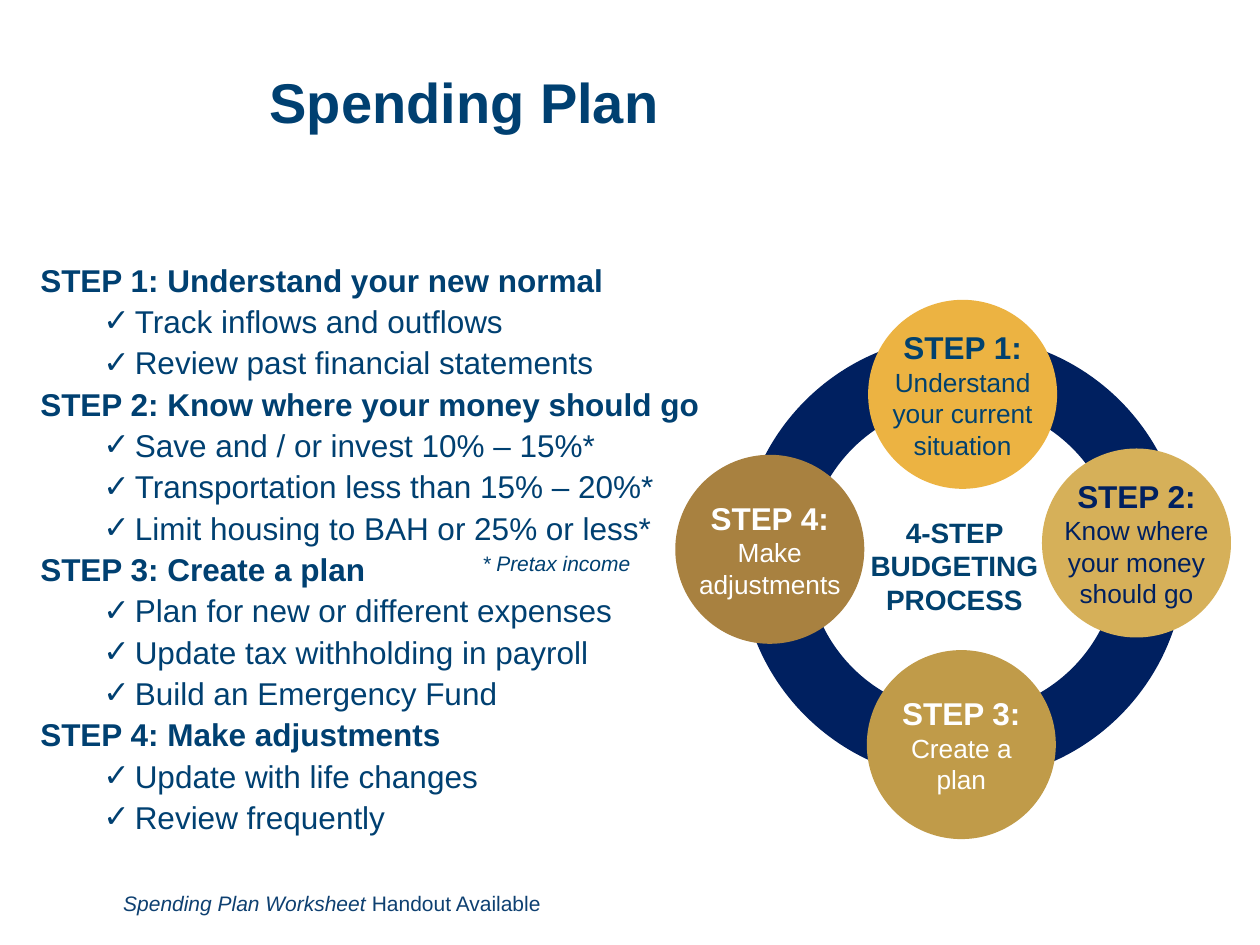
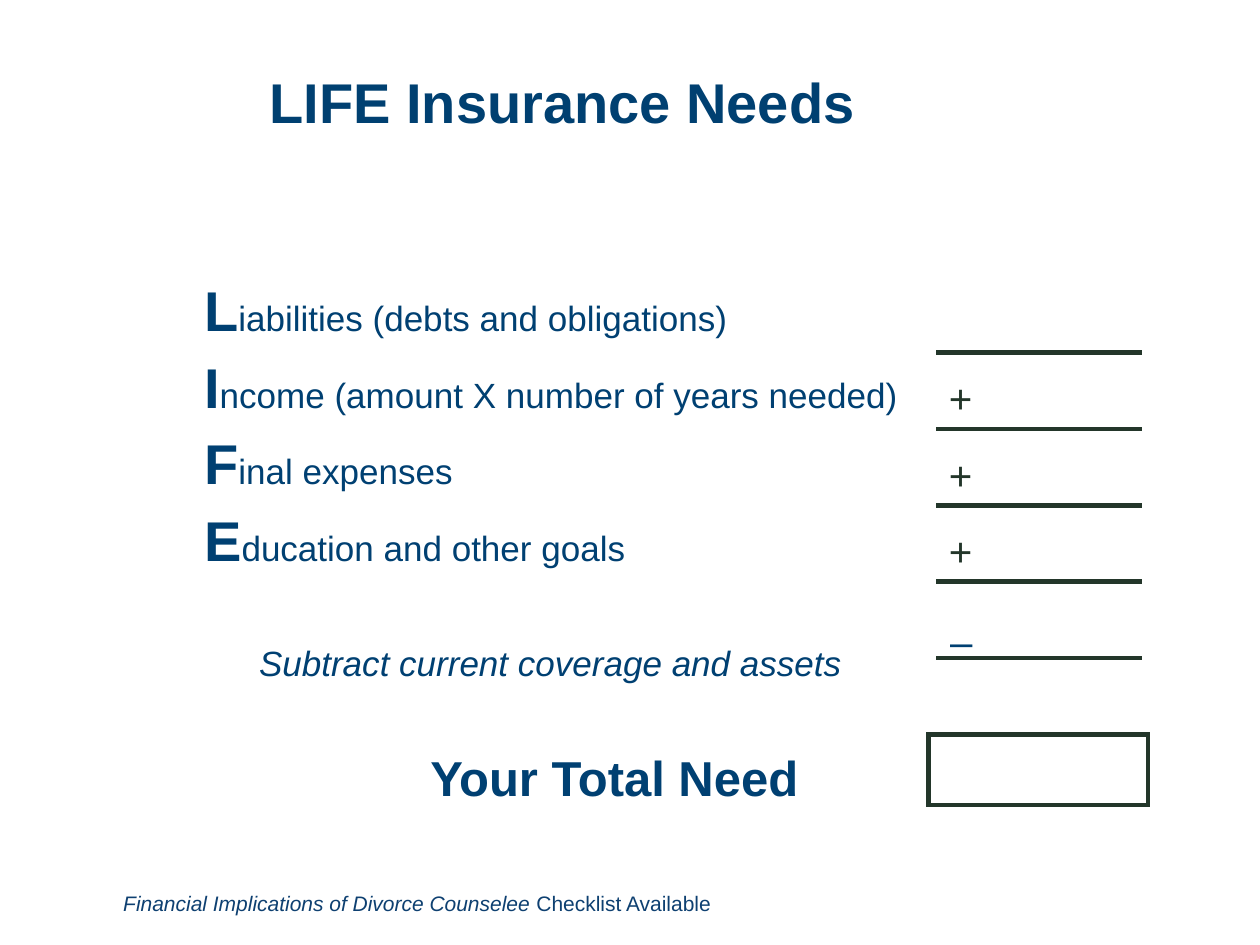
from dataclasses import dataclass
from typing import NamedTuple

from lxml.etree import SubElement
from pptx import Presentation
from pptx.dml.color import RGBColor
from pptx.enum.shapes import MSO_SHAPE
from pptx.enum.text import MSO_ANCHOR as Anchor, MSO_AUTO_SIZE as AutoSize, PP_ALIGN as Align
from pptx.oxml.ns import qn
from pptx.util import Emu, Inches, Pt

SLIDE_WIDTH, SLIDE_HEIGHT = Inches(10), Inches(7.5)
COLUMNS, ROWS = 100, 75
TITLE_AND_CONTENT, TITLE_ONLY = 1, 5
NO_TABLE_STYLE = "{2D5ABB26-0587-4C30-8999-92F81FD0307C}"


@dataclass(frozen=True)
class Theme:
    font: str = "Arial"
    heading: str = "004071"
    table_text: str = "004072"
    ring_text: str = "01416E"
    footer: str = "0E4071"
    navy: str = "002060"
    rule: str = "23362A"
    white: str = "FFFFFF"
    title_size: float = 32
    total_size: float = 28
    sign_size: float = 23
    item_size: float = 20
    step_size: float = 18
    center_size: float = 16
    label_size: float = 15
    note_size: float = 12
    rule_width: float = 3
    ring_width: float = 38.5


THEME = Theme()


class Area(NamedTuple):
    """A rectangle in grid columns and rows."""
    col: float
    row: float
    cols: float
    rows: float

    def emu(self) -> tuple[Emu, Emu, Emu, Emu]:
        return across(self.col), down(self.row), across(self.cols), down(self.rows)


class Span(NamedTuple):
    text: str
    size: float
    color: str
    bold: bool = False
    italic: bool = False


class Step(NamedTuple):
    """A circle on the ring, given by its centre, with its label."""
    heading: str
    lines: tuple[str, ...]
    col: float
    row: float
    fill: str
    ink: str


class PlanStep(NamedTuple):
    heading: str
    actions: tuple[str, ...]


class Need(NamedTuple):
    initial: str
    rest: str
    sign: str


PLAN = (
    PlanStep("STEP 1: Understand your new normal",
             ("Track inflows and outflows", "Review past financial statements")),
    PlanStep("STEP 2: Know where your money should go",
             ("Save and / or invest 10% – 15%*", "Transportation less than 15% – 20%*",
              "Limit housing to BAH or 25% or less*")),
    PlanStep("STEP 3: Create a plan",
             ("Plan for new or different expenses", "Update tax withholding in payroll",
              "Build an Emergency Fund")),
    PlanStep("STEP 4: Make adjustments",
             ("Update with life changes", "Review frequently")),
)
RING = (
    Step("STEP 1:", ("Understand your current", "situation"),
         76.4, 31.3, "ECB342", THEME.ring_text),
    Step("STEP 2:", ("Know where", "your money", "should go"),
         90.2, 43.1, "D6B059", THEME.navy),
    Step("STEP 3:", ("Create a plan",), 76.3, 59.1, "C09B49", THEME.white),
    Step("STEP 4:", ("Make", "adjustments"), 61.1, 43.6, "A88140", THEME.white),
)
NEEDS = (
    Need("L", "iabilities (debts and obligations)", ""),
    Need("I", "ncome (amount X number of years needed)", "+"),
    Need("F", "inal expenses", "+"),
    Need("E", "ducation and other goals", "+"),
)


def across(cols: float) -> Emu:
    return Emu(round(SLIDE_WIDTH * cols / COLUMNS))


def down(rows: float) -> Emu:
    return Emu(round(SLIDE_HEIGHT * rows / ROWS))


def place(shape, area: Area) -> None:
    shape.left, shape.top, shape.width, shape.height = area.emu()


def write(paragraph, *spans: Span, align=Align.LEFT) -> None:
    paragraph.alignment = align
    for span in spans:
        run = paragraph.add_run()
        run.text = span.text
        font = run.font
        font.name, font.size = THEME.font, Pt(span.size)
        font.bold, font.italic = span.bold, span.italic
        font.color.rgb = RGBColor.from_string(span.color)


def next_paragraph(frame, index: int):
    return frame.add_paragraph() if index else frame.paragraphs[0]


def add_text(slide, area: Area, *lines: tuple[Span, ...], align=Align.LEFT,
             anchor=Anchor.TOP) -> None:
    frame = slide.shapes.add_textbox(*area.emu()).text_frame
    frame.word_wrap = True
    frame.vertical_anchor = anchor
    for index, spans in enumerate(lines):
        write(next_paragraph(frame, index), *spans, align=align)


def start_slide(deck, layout: int, title: str, handout: str, availability: str):
    """Add a slide with its title and its handout footer."""
    slide = deck.slides.add_slide(deck.slide_layouts[layout])
    heading = slide.shapes.title
    place(heading, Area(20.4, 1.1, 72.6, 14.5))
    frame = heading.text_frame
    frame.auto_size, frame.vertical_anchor = AutoSize.NONE, Anchor.MIDDLE
    frame.paragraphs[0].line_spacing = 0.9
    write(frame.paragraphs[0], Span(title, THEME.title_size, THEME.heading, bold=True))
    add_text(slide, Area(8.8, 70.2, 62.6, 3),
             (Span(handout, THEME.note_size, THEME.footer, italic=True),
              Span(availability, THEME.note_size, THEME.footer)))
    return slide


def fill_plan(body) -> None:
    place(body, Area(2.1, 20.2, 54.7, 46.1))
    frame = body.text_frame
    frame.auto_size = AutoSize.NONE
    entries = [entry for step in PLAN
               for entry in ((step.heading, True), *((action, False) for action in step.actions))]
    for index, (text, is_heading) in enumerate(entries):
        paragraph = next_paragraph(frame, index)
        paragraph.level = 0 if is_heading else 1
        paragraph.space_before = Pt(2 if index else 0)
        properties = paragraph._p.get_or_add_pPr()
        margin, indent = (0.01, 0) if is_heading else (0.76, -0.25)
        properties.set("marL", str(Inches(margin)))
        properties.set("indent", str(Inches(indent)))
        if is_heading:
            SubElement(properties, qn("a:buNone"))
        else:
            SubElement(properties, qn("a:buFont"), typeface=THEME.font)
            SubElement(properties, qn("a:buChar"), char="✓")
        write(paragraph, Span(text, THEME.step_size, THEME.heading, bold=is_heading))


def add_circle(slide, col: float, row: float, diameter: float):
    """Add a bare circle around a centre point."""
    bounds = Area(col - diameter / 2, row - diameter / 2, diameter, diameter)
    circle = slide.shapes.add_shape(MSO_SHAPE.OVAL, *bounds.emu())
    circle.shadow.inherit = False
    circle.fill.background()
    circle.line.fill.background()
    return circle


def add_ring(slide) -> None:
    band = add_circle(slide, 76.4, 44.3, 30).line
    band.color.rgb = RGBColor.from_string(THEME.navy)
    band.width = Pt(THEME.ring_width)
    for step in RING:
        disc = add_circle(slide, step.col, step.row, 15)
        disc.fill.solid()
        disc.fill.fore_color.rgb = RGBColor.from_string(step.fill)
    add_text(slide, Area(66.6, 40.4, 18.3, 9.1),
             *((Span(line, THEME.center_size, THEME.ring_text, bold=True),)
               for line in ("4-STEP BUDGETING", "PROCESS")), align=Align.CENTER)
    for step in RING:
        add_text(slide, Area(step.col - 7, step.row - 6, 14, 12),
                 (Span(step.heading, THEME.step_size, step.ink, bold=True),),
                 *((Span(line, THEME.label_size, step.ink),) for line in step.lines),
                 align=Align.CENTER, anchor=Anchor.MIDDLE)


def add_plain_table(slide, col: float, row: float, widths: list[float], heights: list[float]):
    """Add a table with no style, fills, header or banding."""
    area = Area(col, row, sum(widths), sum(heights))
    table = slide.shapes.add_table(len(heights), len(widths), *area.emu()).table
    table.first_row = table.horz_banding = False
    table._tbl.tblPr.find(qn("a:tableStyleId")).text = NO_TABLE_STYLE
    for column, width in zip(table.columns, widths):
        column.width = across(width)
    for line, height in zip(table.rows, heights):
        line.height = down(height)
    for cell in table.iter_cells():
        cell.fill.background()
    return table


def rule_cell(cell, sides: str) -> None:
    """Draw borders on the given sides, listed in the order L, R, T, B."""
    properties = cell._tc.get_or_add_tcPr()
    for index, side in enumerate(sides):
        border = SubElement(properties, qn(f"a:ln{side}"), w=str(Pt(THEME.rule_width)))
        SubElement(SubElement(border, qn("a:solidFill")), qn("a:srgbClr"), val=THEME.rule)
        properties.insert(index, border)


def add_needs(slide) -> None:
    table = add_plain_table(slide, 15.2, 21.9, [59.1, 16.3], [6.07] * 5 + [6.4] * 2)
    for index, need in enumerate(NEEDS):
        label, amount = table.cell(index, 0), table.cell(index, 1)
        label.margin_top, label.margin_bottom = Inches(0.04), Inches(0.01)
        write(label.text_frame.paragraphs[0],
              Span(need.initial, THEME.title_size, THEME.table_text, bold=True),
              Span(need.rest, THEME.item_size, THEME.table_text))
        if need.sign:
            amount.vertical_anchor = Anchor.BOTTOM
            write(amount.text_frame.paragraphs[0], Span(need.sign, THEME.sign_size, THEME.rule))
    for index in range(len(NEEDS) + 1):
        rule_cell(table.cell(index, 1), "TB" if index else "B")
    for index in (5, 6):
        table.cell(index, 0).merge(table.cell(index, 1))


def build_spending_plan(deck) -> None:
    slide = start_slide(deck, TITLE_AND_CONTENT, "Spending Plan",
                        "Spending Plan Worksheet", " Handout Available")
    fill_plan(slide.placeholders[1])
    add_text(slide, Area(37.3, 43.2, 14.4, 2.8),
             (Span("* Pretax income", THEME.note_size, THEME.heading, italic=True),))
    add_ring(slide)


def build_life_insurance(deck) -> None:
    slide = start_slide(deck, TITLE_ONLY, "LIFE Insurance Needs",
                        "Financial Implications of Divorce Counselee ", "Checklist Available")
    add_needs(slide)
    add_text(slide, Area(7.7, 50.4, 60.1, 4.4),
             (Span("Subtract current coverage and assets", THEME.item_size,
                   THEME.table_text, italic=True),), align=Align.RIGHT)
    minus = add_plain_table(slide, 74.4, 48.7, [20.1], [4.3]).cell(0, 0)
    write(minus.text_frame.paragraphs[0], Span("–", THEME.sign_size, THEME.table_text))
    add_text(slide, Area(29.8, 58.8, 37.9, 5.7),
             (Span("Your Total Need", THEME.total_size, THEME.table_text, bold=True),),
             align=Align.CENTER)
    rule_cell(add_plain_table(slide, 73.7, 58.3, [17.4], [5.6]).cell(0, 0), "LRTB")


def main() -> None:
    deck = Presentation()
    deck.slide_width, deck.slide_height = SLIDE_WIDTH, SLIDE_HEIGHT
    build_spending_plan(deck)
    build_life_insurance(deck)
    deck.save("out.pptx")


if __name__ == "__main__":
    main()
